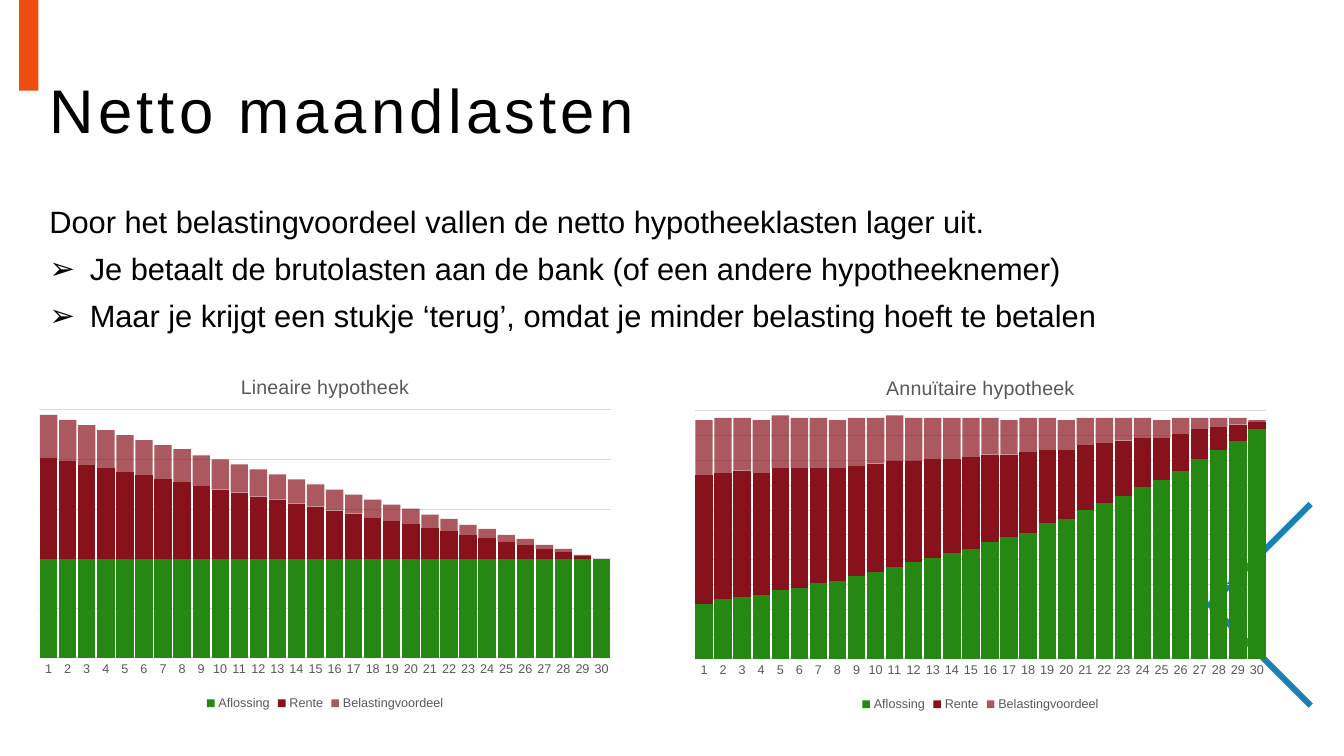
from lxml import etree
from pptx import Presentation
from pptx.chart.data import CategoryChartData
from pptx.dml.color import RGBColor
from pptx.enum import chart as ch, shapes, text
from pptx.oxml import parse_xml
from pptx.oxml.ns import nsdecls, qn
from pptx.util import Inches, Pt

# Content
TITLE = "Netto maandlasten"
INTRO = "Door het belastingvoordeel vallen de netto hypotheeklasten lager uit."
BULLETS = [
    "Je betaalt de brutolasten aan de bank (of een andere hypotheeknemer)",
    "Maar je krijgt een stukje ‘terug’, omdat je minder belasting hoeft te betalen",
]
SERIES = ["Aflossing", "Rente", "Belastingvoordeel"]
YEARS = [str(year) for year in range(1, 31)]
LINEAR = [
    [98] * 30,
    [100, 97, 93, 90, 86, 83, 79, 76, 72, 69, 66, 62, 59, 55, 52,
     48, 45, 41, 38, 35, 31, 28, 24, 21, 17, 14, 10, 7, 3, 0],
    [43, 41, 40, 38, 37, 35, 34, 33, 31, 30, 28, 27, 25, 24, 22,
     21, 19, 18, 16, 15, 13, 12, 10, 9, 7, 6, 4, 3, 1, 0],
]
ANNUITY = [
    [24, 26, 27, 28, 30, 31, 33, 34, 36, 38, 40, 42, 44, 46, 48,
     51, 53, 55, 59, 61, 65, 68, 71, 75, 78, 82, 87, 91, 95, 100],
    [56, 55, 55, 53, 53, 52, 50, 49, 48, 47, 46, 44, 43, 41, 40,
     38, 36, 35, 32, 30, 28, 26, 24, 21, 18, 16, 13, 10, 7, 3],
    [24, 24, 23, 23, 23, 22, 22, 21, 21, 20, 20, 19, 18, 18, 17,
     16, 15, 15, 14, 13, 12, 11, 10, 9, 8, 7, 5, 4, 3, 1],
]
# Title, left, top, axis maximum, number of grid steps, values
CHARTS = [
    ("Lineaire hypotheek", 0.27, 3.55, 246, 5, LINEAR),
    ("Annuïtaire hypotheek", 6.77, 3.56, 108, 10, ANNUITY),
]

# Style
FONT = "Arial"
BLACK = RGBColor(0, 0, 0)
GREY = RGBColor(0x59, 0x59, 0x59)
GRID = RGBColor(0xD9, 0xD9, 0xD9)
ORANGE = RGBColor(0xED, 0x4D, 0x0F)
BLUE = RGBColor(0x1A, 0x80, 0xB6)
GREEN = RGBColor(0x25, 0x88, 0x12)
RED = RGBColor(0x88, 0x12, 0x1B)
SERIES_STYLE = [(GREEN, 100), (RED, 100), (RED, 70)]
WIDTH, HEIGHT = 13.33, 7.5
LEFT = 0.39
CHART_SIZE = (5.91, 3.54)
PLOT = {"x": 0.02, "y": 0.146, "w": 0.96, "h": 0.695}


def set_font(font, size, color):
    font.name, font.size, font.bold = FONT, Pt(size), False
    font.color.rgb = color


def place(sp, left, top, width, height):
    sp.left, sp.top = Inches(left), Inches(top)
    sp.width, sp.height = Inches(width), Inches(height)
    sp.text_frame.auto_size = text.MSO_AUTO_SIZE.NONE
    sp.text_frame.word_wrap = True


def set_bullet(p, char=None):
    pPr = p._p.get_or_add_pPr()
    indent = Inches(0.4) if char else 0
    pPr.set("marL", str(indent))
    pPr.set("indent", str(-indent))
    if char:
        etree.SubElement(pPr, qn("a:buFont")).set("typeface", "Wingdings 3" if char == "" else FONT)
        etree.SubElement(pPr, qn("a:buChar")).set("char", char)
    else:
        etree.SubElement(pPr, qn("a:buNone"))


def add_stacked_chart(slide, title, left, top, maximum, steps, values):
    data = CategoryChartData()
    data.categories = YEARS
    for name, numbers in zip(SERIES, values):
        data.add_series(name, numbers)
    chart = slide.shapes.add_chart(
        ch.XL_CHART_TYPE.COLUMN_STACKED, Inches(left), Inches(top),
        *map(Inches, CHART_SIZE), data).chart
    set_font(chart.font, 10, BLACK)

    # Title and legend
    chart.has_title = True
    chart.chart_title.include_in_layout = False
    tf = chart.chart_title.text_frame
    tf.text = title
    set_font(tf.paragraphs[0].runs[0].font, 14, GREY)
    chart.has_legend = True
    chart.legend.position = ch.XL_LEGEND_POSITION.BOTTOM
    chart.legend.include_in_layout = False
    set_font(chart.legend.font, 9, GREY)

    # Axes
    years = chart.category_axis
    years.major_tick_mark = ch.XL_TICK_MARK.NONE
    years.format.line.color.rgb = GRID
    years.format.line.width = Pt(0.75)
    set_font(years.tick_labels.font, 9, GREY)
    amounts = chart.value_axis
    amounts.visible = False
    amounts.minimum_scale, amounts.maximum_scale = 0, maximum
    amounts.major_unit = maximum / steps
    amounts.major_gridlines.format.line.color.rgb = GRID
    amounts.major_gridlines.format.line.width = Pt(0.75)

    # Columns
    plot = chart.plots[0]
    plot.gap_width, plot.overlap = 10, 100
    plot.vary_by_categories = False
    for series, (color, opacity) in zip(plot.series, SERIES_STYLE):
        fill = series.format.fill
        fill.solid()
        fill.fore_color.rgb = color
        if opacity < 100:
            rgb = series._element.find(".//" + qn("a:srgbClr"))
            etree.SubElement(rgb, qn("a:alpha")).set("val", str(opacity * 1000))

    # Fixed inner plot area
    area = chart._chartSpace.chart.plotArea
    for old in area.findall(qn("c:layout")):
        area.remove(old)
    sizes = "".join(f'<c:{key} val="{share}"/>' for key, share in PLOT.items())
    area.insert(0, parse_xml(
        f'<c:layout {nsdecls("c")}><c:manualLayout><c:layoutTarget val="inner"/>'
        f'<c:xMode val="edge"/><c:yMode val="edge"/>{sizes}'
        '</c:manualLayout></c:layout>'))


def main():
    prs = Presentation()
    prs.slide_width, prs.slide_height = Inches(WIDTH), Inches(HEIGHT)
    slide = prs.slides.add_slide(prs.slide_layouts[1])

    # Orange tab and blue chevron
    tab = slide.shapes.add_shape(shapes.MSO_SHAPE.RECTANGLE, Inches(0.19), 0,
                                 Inches(0.19), Inches(0.9))
    tab.shadow.inherit = False
    tab.fill.solid()
    tab.fill.fore_color.rgb = ORANGE
    tab.line.fill.background()
    tip_x, tip_y = 12.35, 6.12
    reach = WIDTH - tip_x
    builder = slide.shapes.build_freeform(WIDTH, tip_y - reach, scale=Inches(1))
    builder.add_line_segments([(tip_x, tip_y), (WIDTH, tip_y + reach)], close=False)
    chevron = builder.convert_to_shape()
    chevron.shadow.inherit = False
    chevron.fill.background()
    chevron.line.color.rgb = BLUE
    chevron.line.width = Pt(4.25)

    # Title
    title = slide.shapes.title
    place(title, LEFT, 0.4, 12.58, 1.45)
    tf = title.text_frame
    tf.text = TITLE
    tf.vertical_anchor = text.MSO_ANCHOR.MIDDLE
    p = tf.paragraphs[0]
    p.alignment = text.PP_ALIGN.LEFT
    p.line_spacing = 0.9
    r = p.runs[0]
    set_font(r.font, 44, BLACK)
    r._r.get_or_add_rPr().set("spc", "300")

    # Body
    body = slide.placeholders[1]
    place(body, LEFT, 2, 12.12, 1.56)
    tf = body.text_frame
    tf.text = "\n".join([INTRO] + BULLETS)
    for i, p in enumerate(tf.paragraphs):
        set_bullet(p, "➢" if i else None)
        p.line_spacing = 0.9
        p.space_before = Pt(10 if i else 0)
        set_font(p.runs[0].font, 22, BLACK)

    # Charts
    for spec_row in CHARTS:
        add_stacked_chart(slide, *spec_row)

    prs.save("out.pptx")


if __name__ == "__main__":
    main()
